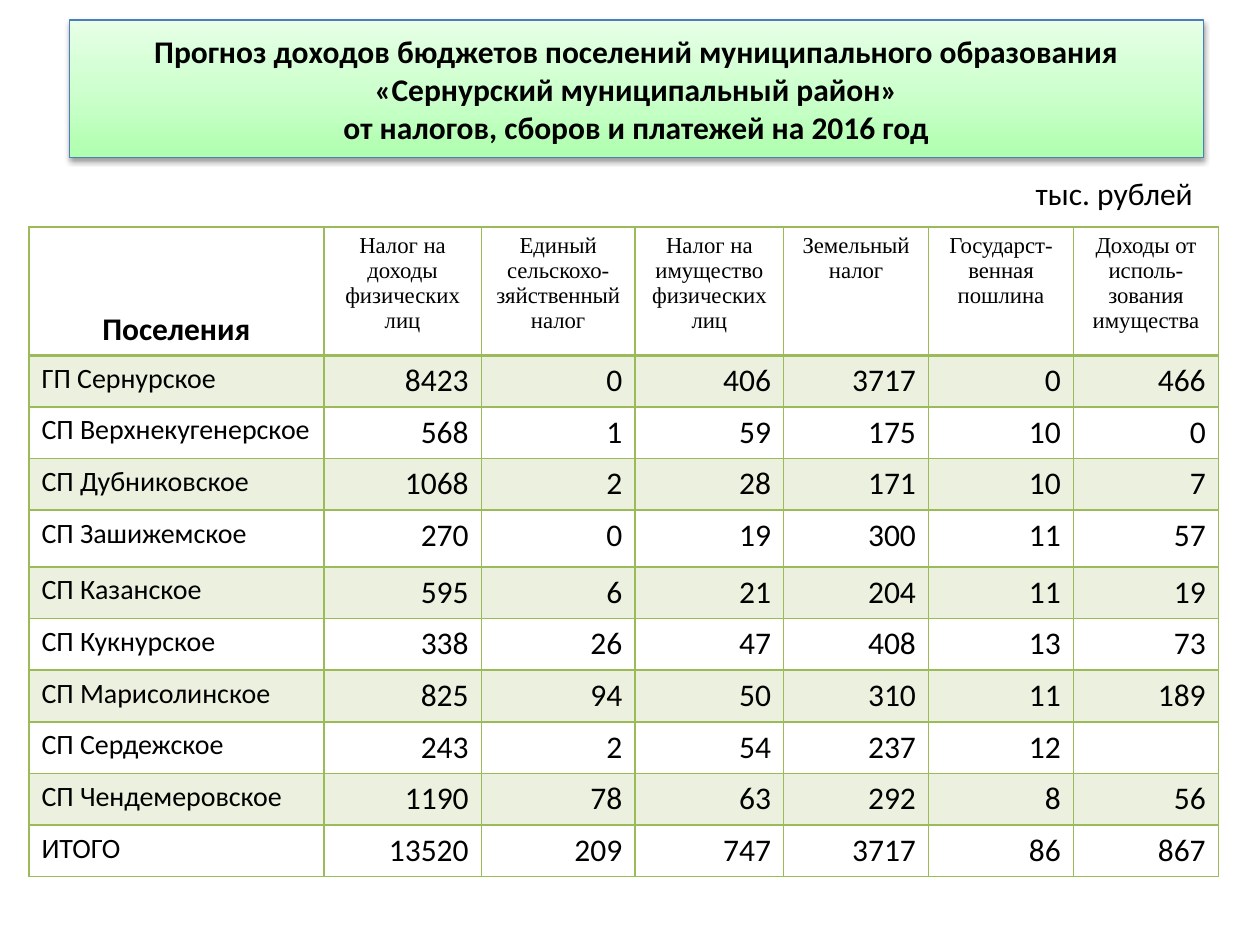
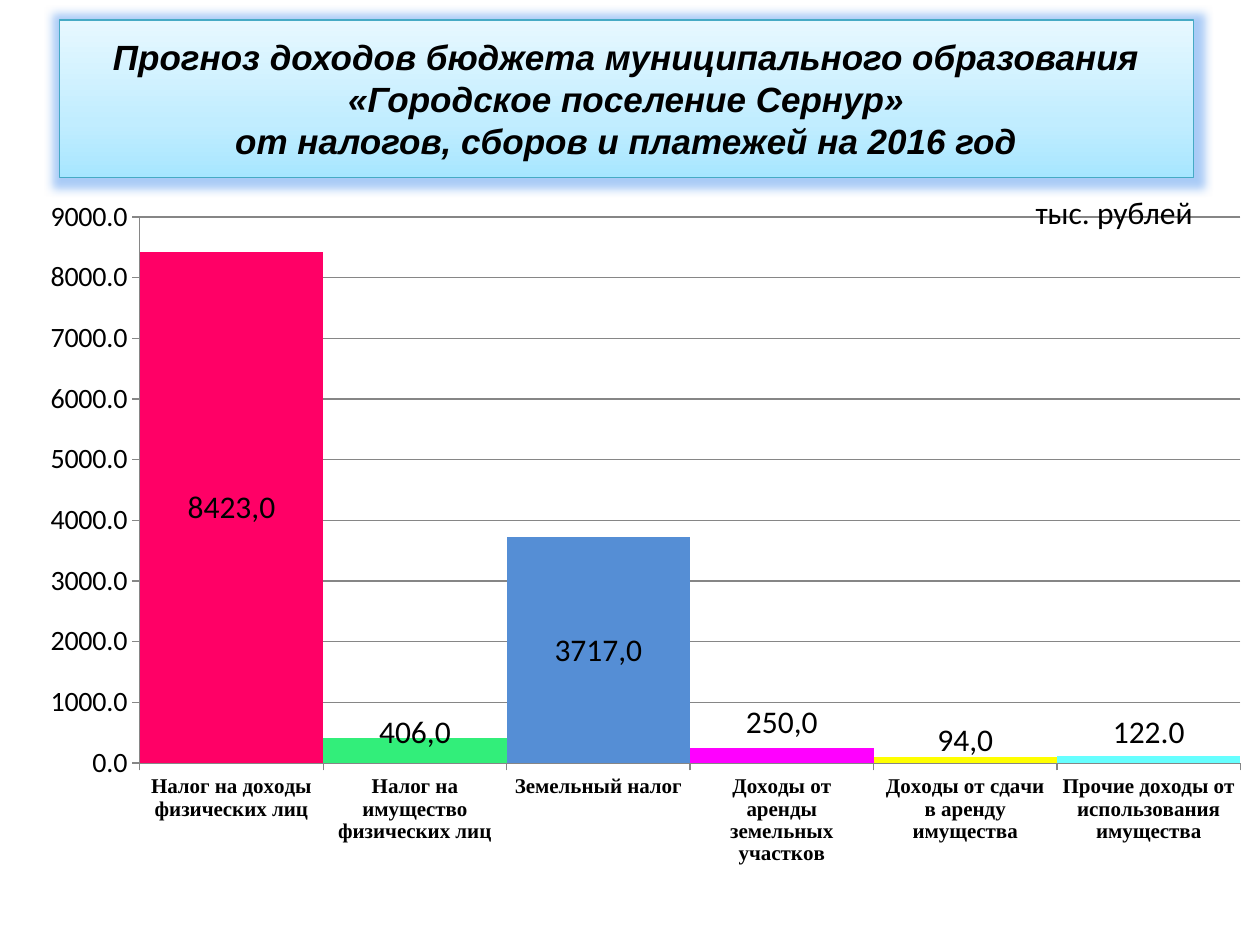
"""Two slides on settlement budget revenue: a table by settlement and a column chart."""
from lxml.etree import SubElement
from pptx import Presentation
from pptx.chart.data import CategoryChartData as ChartData
from pptx.dml.color import RGBColor as RGB
from pptx.enum.chart import XL_CHART_TYPE as Kind, XL_LABEL_POSITION as Spot, XL_TICK_MARK as Tick
from pptx.enum.shapes import MSO_SHAPE as Form
from pptx.enum.text import MSO_ANCHOR as Anchor, PP_ALIGN as Align
from pptx.oxml import parse_xml
from pptx.oxml.ns import nsdecls, qn
from pptx.util import Inches, Pt

BLACK = RGB(0, 0, 0)
WHITE = RGB(255, 255, 255)
GREEN = RGB(0x9B, 0xBB, 0x59)
PALE = RGB(0xEB, 0xF1, 0xDE)
BLUE = RGB(0x4B, 0x7E, 0xBC)
TEAL = RGB(0x46, 0xAA, 0xC5)
GRAY = RGB(0x86, 0x86, 0x86)
MINT = [(0, RGB(0xAF, 0xFF, 0xAF)), (50, RGB(0xCE, 0xFF, 0xCE)), (100, RGB(0xE7, 0xFF, 0xE7))]
SKY = [(0, RGB(0xA7, 0xE6, 0xFF)), (35, RGB(0xC1, 0xED, 0xFF)), (100, RGB(0xE7, 0xF8, 0xFF))]
BARS = [RGB(0xFF, 0, 0x66), RGB(0x32, 0xEE, 0x7A), RGB(0x55, 0x8E, 0xD5),
        RGB(0xFF, 0, 0xFF), RGB(0xFF, 0xFF, 0), RGB(0x66, 0xFF, 0xFF)]
SHADE = ('<a:outerShdw {} blurRad="40000" dist="20000" dir="5400000" rotWithShape="0">'
         '<a:srgbClr val="000000"><a:alpha val="38000"/></a:srgbClr></a:outerShdw>')
GLOW = ('<a:glow {} rad="139700"><a:srgbClr val="2A7DEA"><a:alpha val="40000"/>'
        '</a:srgbClr></a:glow>')


def write(par, text, size, font="Calibri", bold=False, ital=False, align=Align.LEFT):
    par.alignment = align
    run = par.add_run()
    run.text = text
    run.font.size = Pt(size)
    run.font.name = font
    run.font.bold = bold
    run.font.italic = ital
    run.font.color.rgb = BLACK


deck = Presentation()
deck.slide_width = Inches(10)
deck.slide_height = Inches(7.5)

heads = [
    (["Прогноз доходов бюджетов поселений муниципального образования",
      "«Сернурский муниципальный район»",
      "от налогов, сборов и платежей на 2016 год"],
     Form.RECTANGLE, 0.55, 1.09, MINT, BLUE, SHADE, 18, "Calibri", False),
    (["Прогноз доходов бюджета муниципального образования",
      "«Городское поселение Сернур»",
      "от налогов, сборов и платежей на 2016 год"],
     Form.ROUNDED_RECTANGLE, 0.47, 1.25, SKY, TEAL, GLOW, 20, "Arial", True),
]
pages = []
for lines, form, left, high, stops, edge, effect, size, font, ital in heads:
    page = deck.slides.add_slide(deck.slide_layouts[6])
    pages.append(page)
    band = page.shapes.add_shape(form, Inches(left), Inches(0.16), Inches(9), Inches(high))
    if form == Form.ROUNDED_RECTANGLE:
        band.adjustments[0] = 0
    band.fill.gradient()
    band.fill.gradient_angle = 90
    marks = band._element.spPr.find(qn("a:gradFill")).find(qn("a:gsLst"))
    for old in list(marks):
        marks.remove(old)
    for pos, tint in stops:
        mark = SubElement(marks, qn("a:gs"), pos=str(pos * 1000))
        SubElement(mark, qn("a:srgbClr"), val=str(tint))
    band.line.color.rgb = edge
    band.line.width = Pt(0.75)
    band.shadow.inherit = False
    band._element.spPr.find(qn("a:effectLst")).append(parse_xml(effect.format(nsdecls("a"))))
    frame = band.text_frame
    frame.word_wrap = True
    frame.vertical_anchor = Anchor.MIDDLE
    par = frame.paragraphs[0]
    for i, line in enumerate(lines):
        if i:
            par.add_line_break()
        write(par, line, size, font, True, ital, Align.CENTER)

rows = [
    ["Поселения", "Налог на доходы физических лиц", "Единый сельскохо-зяйственный налог",
     "Налог на имущество физических лиц", "Земельный налог", "Государст-венная пошлина",
     "Доходы от исполь-зования имущества"],
    ["ГП Сернурское", 8423, 0, 406, 3717, 0, 466],
    ["СП Верхнекугенерское", 568, 1, 59, 175, 10, 0],
    ["СП Дубниковское", 1068, 2, 28, 171, 10, 7],
    ["СП Зашижемское", 270, 0, 19, 300, 11, 57],
    ["СП Казанское", 595, 6, 21, 204, 11, 19],
    ["СП Кукнурское", 338, 26, 47, 408, 13, 73],
    ["СП Марисолинское", 825, 94, 50, 310, 11, 189],
    ["СП Сердежское", 243, 2, 54, 237, 12, ""],
    ["СП Чендемеровское", 1190, 78, 63, 292, 8, 56],
    ["ИТОГО", 13520, 209, 747, 3717, 86, 867],
]
wides = [2.34, 1.25, 1.22, 1.18, 1.15, 1.15, 1.15]
highs = [1.02] + [0.41] * 3 + [0.45] + [0.41] * 6
grid = pages[0].shapes.add_table(len(rows), len(wides), Inches(0.23), Inches(1.8),
                                 Inches(sum(wides)), Inches(sum(highs))).table
grid.first_row = False
grid.horz_banding = False
for col, wide in zip(grid.columns, wides):
    col.width = Inches(wide)
for r, row in enumerate(rows):
    grid.rows[r].height = Inches(highs[r])
    for c, item in enumerate(row):
        cell = grid.cell(r, c)
        par = cell.text_frame.paragraphs[0]
        if r == 0 and c == 0:
            cell.vertical_anchor = Anchor.BOTTOM
            write(par, item, 18, bold=True, align=Align.CENTER)
        elif r == 0:
            write(par, item, 13, "Times New Roman", align=Align.CENTER)
        elif c == 0:
            write(par, item, 16)
        elif item != "":
            write(par, str(item), 18, align=Align.RIGHT)
        props = cell._tc.get_or_add_tcPr()
        for side in "LRTB":
            thick = 2 if (r, side) in [(0, "B"), (1, "T")] else 1
            edge = SubElement(props, qn("a:ln" + side), w=str(Pt(thick)))
            SubElement(SubElement(edge, qn("a:solidFill")), qn("a:srgbClr"), val=str(GREEN))
        cell.fill.solid()
        cell.fill.fore_color.rgb = PALE if r % 2 else WHITE

data = ChartData(number_format="0.0")
data.categories = ["Налог на доходы физических лиц", "Налог на имущество физических лиц",
                   "Земельный налог", "Доходы от аренды земельных участков",
                   "Доходы от сдачи в аренду имущества",
                   "Прочие доходы от использования имущества"]
data.add_series("Series 1", [8423, 406, 3717, 250, 94, 122])
chart = pages[1].shapes.add_chart(Kind.COLUMN_STACKED, Inches(0.16), Inches(1.56),
                                  Inches(9.69), Inches(5.78), data).chart
chart.has_legend = False
chart.has_title = False
chart.font.size = Pt(18)
chart.font.name = "Calibri"
chart.font.color.rgb = BLACK
area = chart._chartSpace.chart.plotArea
for old in area.findall(qn("c:layout")):
    area.remove(old)
lay = parse_xml(f"<c:layout {nsdecls('c')}><c:manualLayout/></c:layout>")
area.insert(0, lay)
for tag, val in [("layoutTarget", "inner"), ("xMode", "edge"), ("yMode", "edge"),
                 ("x", "0.098"), ("y", "0.028"), ("w", "0.902"), ("h", "0.75")]:
    SubElement(lay[0], qn("c:" + tag), val=val)

cats, vals = chart.category_axis, chart.value_axis
for axis, size in [(cats, 12), (vals, 16)]:
    axis.major_tick_mark = Tick.OUTSIDE
    axis.format.line.color.rgb = GRAY
    axis.tick_labels.font.size = Pt(size)
    axis.tick_labels.font.color.rgb = BLACK
cats.tick_labels.font.bold = True
cats.tick_labels.font.name = "Times New Roman"
vals.minimum_scale = 0
vals.maximum_scale = 9000
vals.major_unit = 1000
vals.has_major_gridlines = True
vals.major_gridlines.format.line.color.rgb = GRAY
vals.tick_labels.number_format = "0.0"
vals.tick_labels.number_format_is_linked = False

plot = chart.plots[0]
plot.gap_width = 0
plot.overlap = 88
plot.vary_by_categories = False
series = plot.series[0]
series.format.fill.solid()
series.format.fill.fore_color.rgb = BARS[-1]
tags = series.data_labels
tags.show_value = True
tags.number_format = "0.0"
tags.number_format_is_linked = False
tags.position = Spot.CENTER
texts = ["8423,0", "406,0", "3717,0", "250,0", "94,0", ""]
lifts = [0, -0.025, 0, -0.045, -0.027, -0.037]
for i, (tint, text, lift) in enumerate(zip(BARS, texts, lifts)):
    point = series.points[i]
    point.format.fill.solid()
    point.format.fill.fore_color.rgb = tint
    tag = point.data_label
    tag.position = Spot.CENTER
    if text:
        write(tag.text_frame.paragraphs[0], text, 18, align=Align.CENTER)
    else:
        tag.font.size = Pt(18)
    node = series._element.find(qn("c:dLbls")).findall(qn("c:dLbl"))[i]
    if not text:
        node.insert(1, parse_xml(f'<c:numFmt {nsdecls("c")} formatCode="0.0" sourceLinked="0"/>'))
    if lift:
        node.insert(1, parse_xml(f'<c:layout {nsdecls("c")}><c:manualLayout><c:x val="0"/>'
                                 f'<c:y val="{lift}"/></c:manualLayout></c:layout>'))

for page, left, top, wide in [(pages[0], 7.73, 1.33, 2.11), (pages[1], 8.12, 1.48, 1.88)]:
    note = page.shapes.add_textbox(Inches(left), Inches(top), Inches(wide), Inches(0.4))
    note.text_frame.word_wrap = True
    note.text_frame.margin_left = Inches(8.22 - left)
    write(note.text_frame.paragraphs[0], "тыс. рублей", 18)

deck.save("out.pptx")
